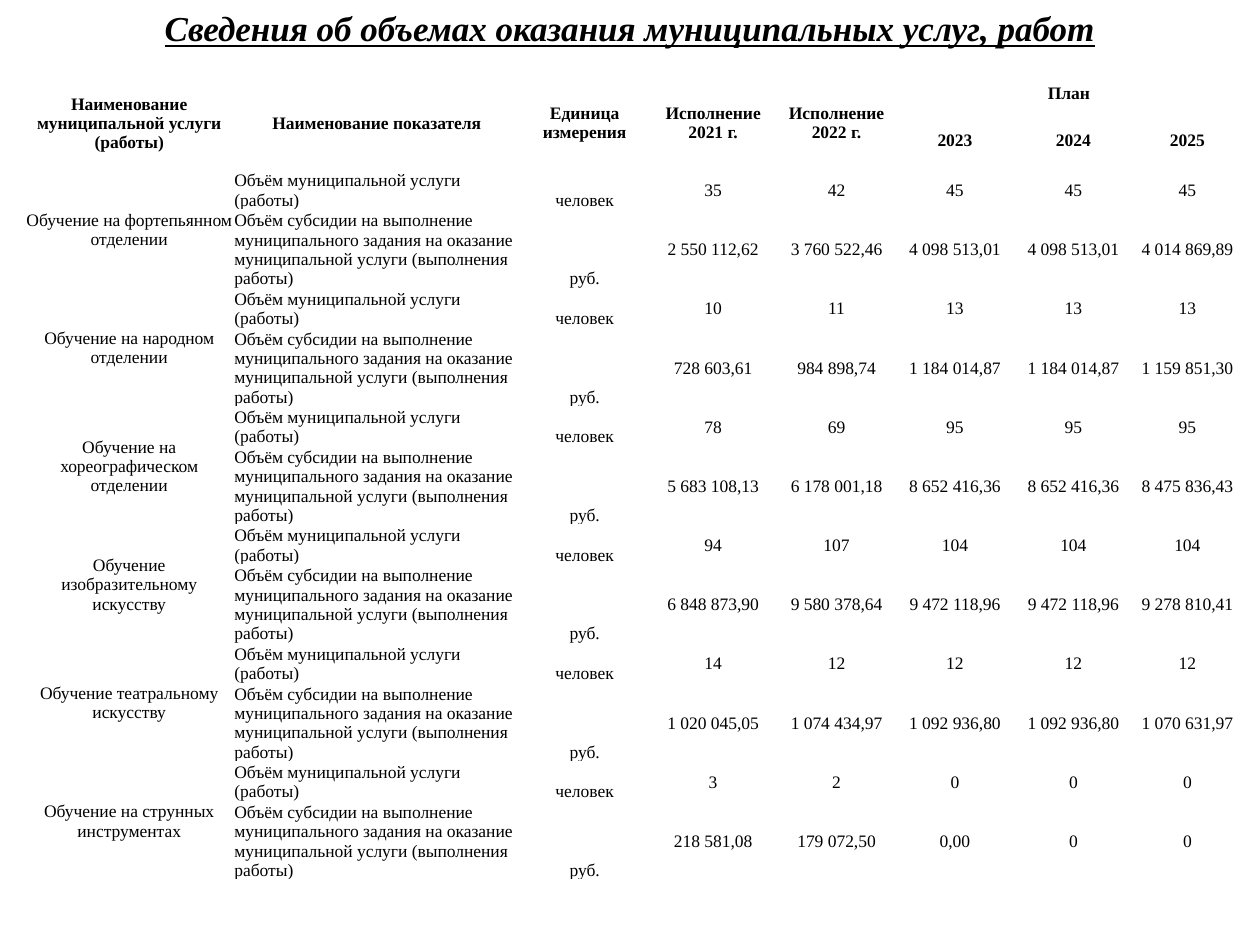
"""Builds a slide with a table of municipal service volumes, 2021 to 2025."""
from lxml import etree
from pptx import Presentation
from pptx.dml.color import RGBColor
from pptx.enum.text import MSO_ANCHOR, PP_ALIGN
from pptx.oxml.ns import qn
from pptx.util import Inches, Pt

CENTER, LEFT = PP_ALIGN.CENTER, PP_ALIGN.LEFT
MIDDLE, BOTTOM = MSO_ANCHOR.MIDDLE, MSO_ANCHOR.BOTTOM
COLORS = {"text": "000000", "border": "FFFFFF"}
FONT = "Times New Roman"

COLUMN_WIDTHS = [1.65, 2.28, 1.02, 1.02, 0.94, 0.94, 0.94, 0.87]
HEADER_HEIGHTS = [0.28, 0.47]
SERVICE_HEIGHTS = [0.31, 0.62]

HEADINGS = [
    "Наименование муниципальной услуги (работы)",
    "Наименование показателя",
    "Единица измерения",
    "Исполнение 2021 г.",
    "Исполнение 2022 г.",
]
PLAN_YEARS = ["2023", "2024", "2025"]
INDICATORS = [
    ("Объём муниципальной услуги (работы)", "человек"),
    ("Объём субсидии на выполнение муниципального задания на оказание "
     "муниципальной услуги (выполнения работы)", "руб."),
]
SERVICES = [
    ("Обучение на фортепьянном отделении",
     ["35", "42", "45", "45", "45"],
     ["2 550 112,62", "3 760 522,46", "4 098 513,01", "4 098 513,01", "4 014 869,89"]),
    ("Обучение на народном отделении",
     ["10", "11", "13", "13", "13"],
     ["728 603,61", "984 898,74", "1 184 014,87", "1 184 014,87", "1 159 851,30"]),
    ("Обучение на хореографическом отделении",
     ["78", "69", "95", "95", "95"],
     ["5 683 108,13", "6 178 001,18", "8 652 416,36", "8 652 416,36", "8 475 836,43"]),
    ("Обучение изобразительному искусству",
     ["94", "107", "104", "104", "104"],
     ["6 848 873,90", "9 580 378,64", "9 472 118,96", "9 472 118,96", "9 278 810,41"]),
    ("Обучение театральному искусству",
     ["14", "12", "12", "12", "12"],
     ["1 020 045,05", "1 074 434,97", "1 092 936,80", "1 092 936,80", "1 070 631,97"]),
    ("Обучение на струнных инструментах",
     ["3", "2", "0", "0", "0"],
     ["218 581,08", "179 072,50", "0,00", "0", "0"]),
]


def format_paragraph(paragraph, size, bold, alignment=CENTER):
    paragraph.alignment = alignment
    paragraph.font.name = FONT
    paragraph.font.size = Pt(size)
    paragraph.font.bold = bold
    paragraph.font.color.rgb = RGBColor.from_string(COLORS["text"])


def add_borders(cell):
    properties = cell._tc.get_or_add_tcPr()
    for side in ("a:lnL", "a:lnR", "a:lnT", "a:lnB"):
        line = etree.SubElement(properties, qn(side), w=str(Pt(1)))
        fill = etree.SubElement(line, qn("a:solidFill"))
        etree.SubElement(fill, qn("a:srgbClr"), val=COLORS["border"])


presentation = Presentation()
presentation.slide_width = Inches(10)
presentation.slide_height = Inches(7.5)
slide = presentation.slides.add_slide(presentation.slide_layouts[5])

title = slide.shapes.title
title.left, title.top = 0, 0
title.width, title.height = presentation.slide_width, Inches(0.44)
title.text_frame.text = "Сведения об объемах оказания муниципальных услуг, работ"
title.text_frame.vertical_anchor = MIDDLE
heading = title.text_frame.paragraphs[0]
format_paragraph(heading, 20, True)
heading.font.italic = True
heading.font.underline = True

rows = [HEADINGS + ["План", "", ""], [""] * len(HEADINGS) + PLAN_YEARS]
for service, *value_rows in SERVICES:
    for name, (indicator, unit), values in zip((service, ""), INDICATORS, value_rows):
        rows.append([name, indicator, unit, *values])
row_heights = HEADER_HEIGHTS + SERVICE_HEIGHTS * len(SERVICES)

table = slide.shapes.add_table(
    len(rows), len(COLUMN_WIDTHS), Inches(0.2), Inches(0.6),
    Inches(sum(COLUMN_WIDTHS)), Inches(sum(row_heights))).table
table.first_row = False
table.horz_banding = False
for column, width in zip(table.columns, COLUMN_WIDTHS):
    column.width = Inches(width)
for row, height in zip(table.rows, row_heights):
    row.height = Inches(height)

for row_index, texts in enumerate(rows):
    is_header = row_index < len(HEADER_HEIGHTS)
    for column_index, text in enumerate(texts):
        cell = table.cell(row_index, column_index)
        cell.text = text
        cell.margin_left = cell.margin_right = cell.margin_top = Inches(0.01)
        cell.margin_bottom = 0
        cell.vertical_anchor = BOTTOM if column_index == 2 and not is_header else MIDDLE
        add_borders(cell)
        cell.fill.background()
        alignment = LEFT if column_index == 1 and not is_header else CENTER
        format_paragraph(cell.text_frame.paragraphs[0], 10, is_header, alignment)

for column_index in range(len(HEADINGS)):
    table.cell(0, column_index).merge(table.cell(1, column_index))
table.cell(0, len(HEADINGS)).merge(table.cell(0, len(COLUMN_WIDTHS) - 1))
for row_index in range(len(HEADER_HEIGHTS), len(rows), len(INDICATORS)):
    table.cell(row_index, 0).merge(table.cell(row_index + 1, 0))

presentation.save("out.pptx")
